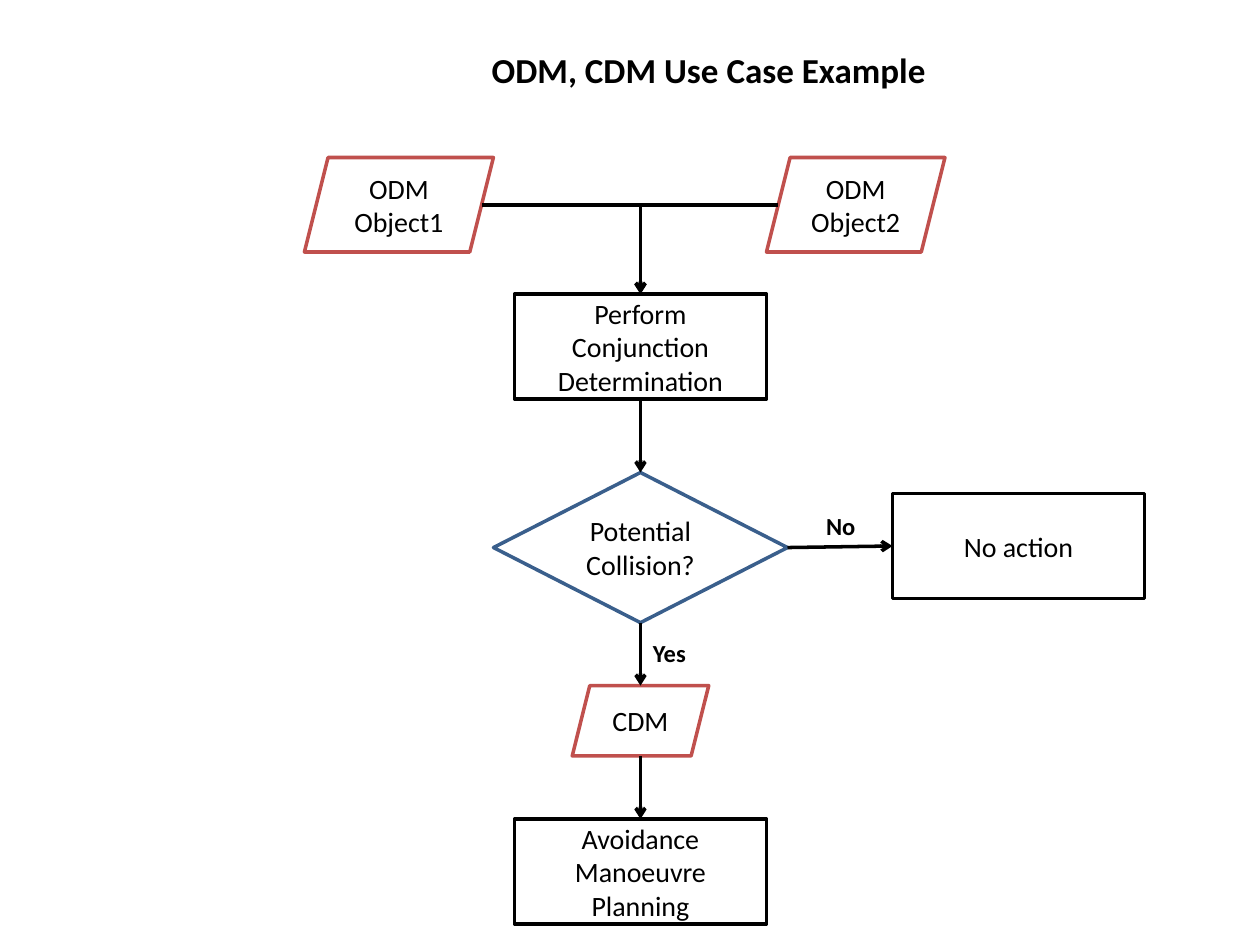
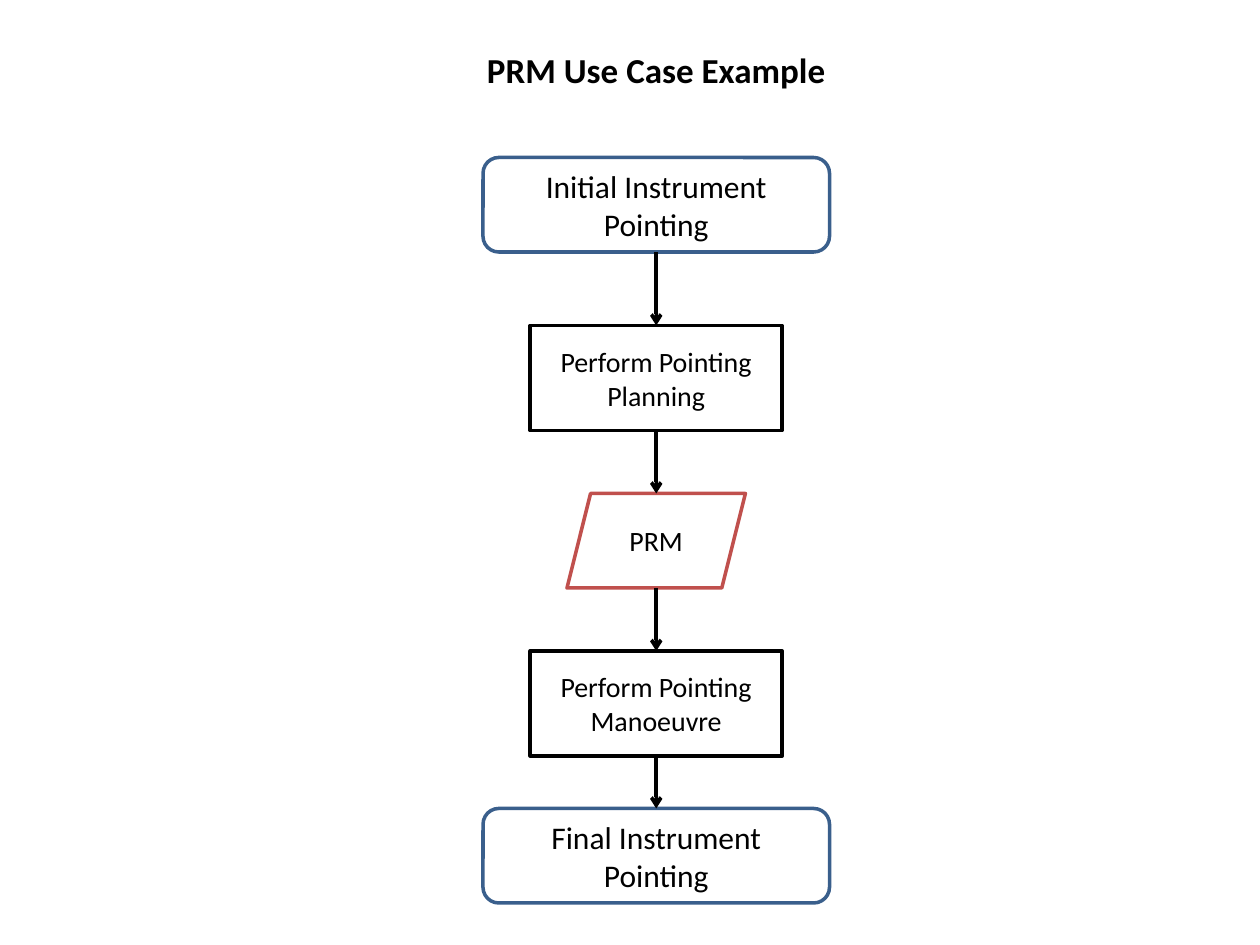
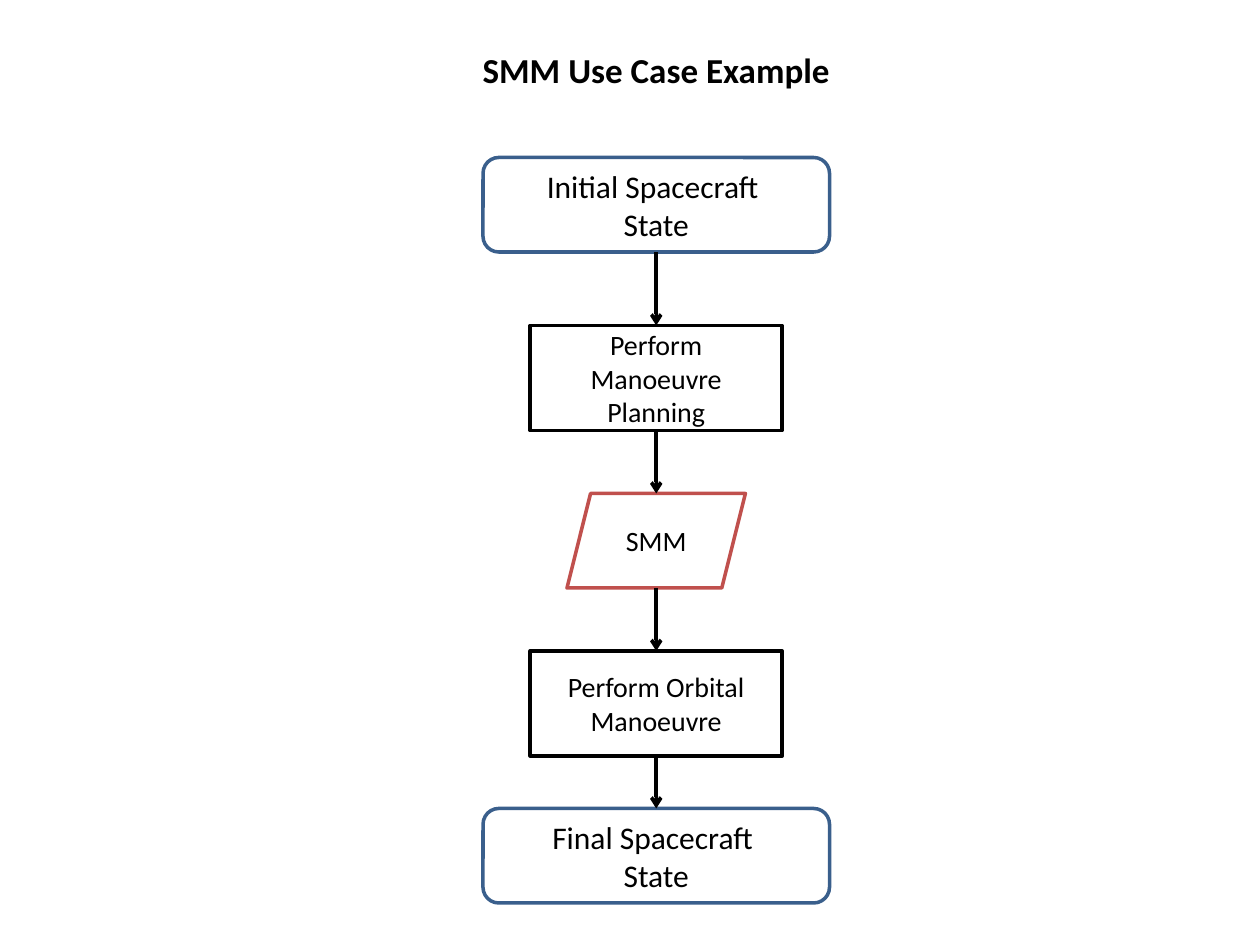
from itertools import pairwise

from lxml import etree
from pptx import Presentation
from pptx.dml.color import RGBColor
from pptx.enum.shapes import MSO_CONNECTOR, MSO_SHAPE
from pptx.enum.text import MSO_ANCHOR, MSO_AUTO_SIZE, PP_ALIGN
from pptx.oxml.ns import qn
from pptx.util import Emu, Pt

PX = 7620  # 120 px to the inch
FONT = "Calibri"
BLACK = RGBColor(0x00, 0x00, 0x00)
WHITE = RGBColor(0xFF, 0xFF, 0xFF)
RED = RGBColor(0xC0, 0x50, 0x4D)
BLUE = RGBColor(0x3A, 0x5F, 0x8C)
LINE_WIDTH = Pt(2)
TITLE_ONLY = 5
STRAIGHT, ELBOW = MSO_CONNECTOR.STRAIGHT, MSO_CONNECTOR.ELBOW
CENTER = PP_ALIGN.CENTER
TOP, LEFT, BOTTOM, RIGHT = range(4)

# kind: preset shape, line colour, fill, text size
KINDS = {
    "message": (MSO_SHAPE.PARALLELOGRAM, RED, None, 16),
    "process": (MSO_SHAPE.RECTANGLE, BLACK, None, 16),
    "decision": (MSO_SHAPE.FLOWCHART_DECISION, BLUE, None, 16),
    "state": (MSO_SHAPE.ROUNDED_RECTANGLE, BLUE, WHITE, 18),
}

COLLISION_TITLE = "ODM, CDM Use Case Example"
COLLISION_STEPS = {
    "object1": ("message", "ODM\nObject1", (290, 150, 180, 90)),
    "object2": ("message", "ODM\nObject2", (730, 150, 170, 90)),
    "determination": ("process", "Perform Conjunction Determination", (490, 280, 240, 100)),
    "collision": ("decision", "Potential Collision?", (470, 450, 280, 143)),
    "cdm": ("message", "CDM", (545, 653, 130, 67)),
    "avoidance": ("process", "Avoidance Manoeuvre Planning", (490, 780, 240, 100)),
    "no_action": ("process", "No action", (850, 470, 240, 100)),
}
COLLISION_FLOW = ["determination", "collision", "cdm", "avoidance"]
ANSWERS = [("Yes", 610, 602), ("No", 775, 481)]
MERGE_STARTS = [(459, 195), (741, 195)]
MERGE_END = (610, 280)

CHAIN_CENTER = 625
CHAIN_ROWS = [  # kind, top, width, height
    ("state", 150, 330, 90),
    ("process", 310, 240, 100),
    ("message", 470, 170, 90),
    ("process", 620, 240, 100),
    ("state", 770, 330, 90),
]
CHAINS = [
    ("PRM Use Case Example",
     ["Initial Instrument Pointing", "Perform Pointing Planning", "PRM",
      "Perform Pointing Manoeuvre", "Final Instrument Pointing"]),
    ("SMM Use Case Example",
     ["Initial Spacecraft \nState", "Perform Manoeuvre Planning", "SMM",
      "Perform Orbital Manoeuvre", "Final Spacecraft \nState"]),
]


def px(*lengths):
    return [Emu(length * PX) for length in lengths]


def write(shape, text, size, align=None, bold=False):
    frame = shape.text_frame
    frame.text = text
    frame.word_wrap = True
    for paragraph in frame.paragraphs:
        paragraph.alignment = align
        font = paragraph.font
        font.name, font.size, font.bold = FONT, Pt(size), bold
        font.color.rgb = BLACK


def add_titled_slide(prs, text, width):
    slide = prs.slides.add_slide(prs.slide_layouts[TITLE_ONLY])
    title = slide.shapes.title
    title.left, title.top, title.width, title.height = px(280, 40, width, 53)
    write(title, text, 20, CENTER, bold=True)
    title.text_frame.vertical_anchor = MSO_ANCHOR.TOP
    title.text_frame.auto_size = MSO_AUTO_SIZE.SHAPE_TO_FIT_TEXT
    return slide


def add_step(slide, kind, text, box):
    preset, line, fill, size = KINDS[kind]
    step = slide.shapes.add_shape(preset, *px(*box))
    step.shadow.inherit = False
    if fill is None:
        step.fill.background()
    else:
        step.fill.solid()
        step.fill.fore_color.rgb = fill
    step.line.color.rgb = line
    step.line.width = LINE_WIDTH
    write(step, text, size, CENTER)
    return step


def add_arrow(slide, start, end, route=STRAIGHT):
    arrow = slide.shapes.add_connector(route, *start, *end)
    arrow.line.color.rgb = BLACK
    arrow.line.width = LINE_WIDTH
    etree.SubElement(arrow.line._get_or_add_ln(), qn("a:tailEnd"), type="arrow")
    properties = arrow._element.spPr
    etree.SubElement(properties, qn("a:effectLst"))
    if route == ELBOW:
        properties.find(qn("a:prstGeom")).set("prst", "bentConnector2")
    return arrow


def side_middle(step, side):
    across = {LEFT: 0, RIGHT: step.width}.get(side, step.width // 2)
    down = {TOP: 0, BOTTOM: step.height}.get(side, step.height // 2)
    return step.left + across, step.top + down


def link(slide, source, target, out=BOTTOM, into=TOP):
    """Draw an arrow between two steps; parallelograms have other joining sites."""
    arrow = add_arrow(slide, side_middle(source, out), side_middle(target, into))
    if source.auto_shape_type != MSO_SHAPE.PARALLELOGRAM:
        arrow.begin_connect(source, out)
    if target.auto_shape_type != MSO_SHAPE.PARALLELOGRAM:
        arrow.end_connect(target, into)


def build_collision_slide(prs):
    slide = add_titled_slide(prs, COLLISION_TITLE, 790)
    steps = {key: add_step(slide, *step) for key, step in COLLISION_STEPS.items()}
    for start in MERGE_STARTS:
        add_arrow(slide, px(*start), px(*MERGE_END), ELBOW)
    for source, target in pairwise(COLLISION_FLOW):
        link(slide, steps[source], steps[target])
    link(slide, steps["collision"], steps["no_action"], RIGHT, LEFT)
    for answer, left, top in ANSWERS:
        write(slide.shapes.add_textbox(*px(left, top, 74, 41)), answer, 14, bold=True)


def build_chain_slide(prs, title, texts):
    slide = add_titled_slide(prs, title, 690)
    steps = [
        add_step(slide, kind, text, (CHAIN_CENTER - width // 2, top, width, height))
        for (kind, top, width, height), text in zip(CHAIN_ROWS, texts)
    ]
    for source, target in pairwise(steps):
        link(slide, source, target)


def main():
    prs = Presentation()
    prs.slide_width, prs.slide_height = px(1200, 900)
    build_collision_slide(prs)
    for title, texts in CHAINS:
        build_chain_slide(prs, title, texts)
    prs.save("out.pptx")


if __name__ == "__main__":
    main()
